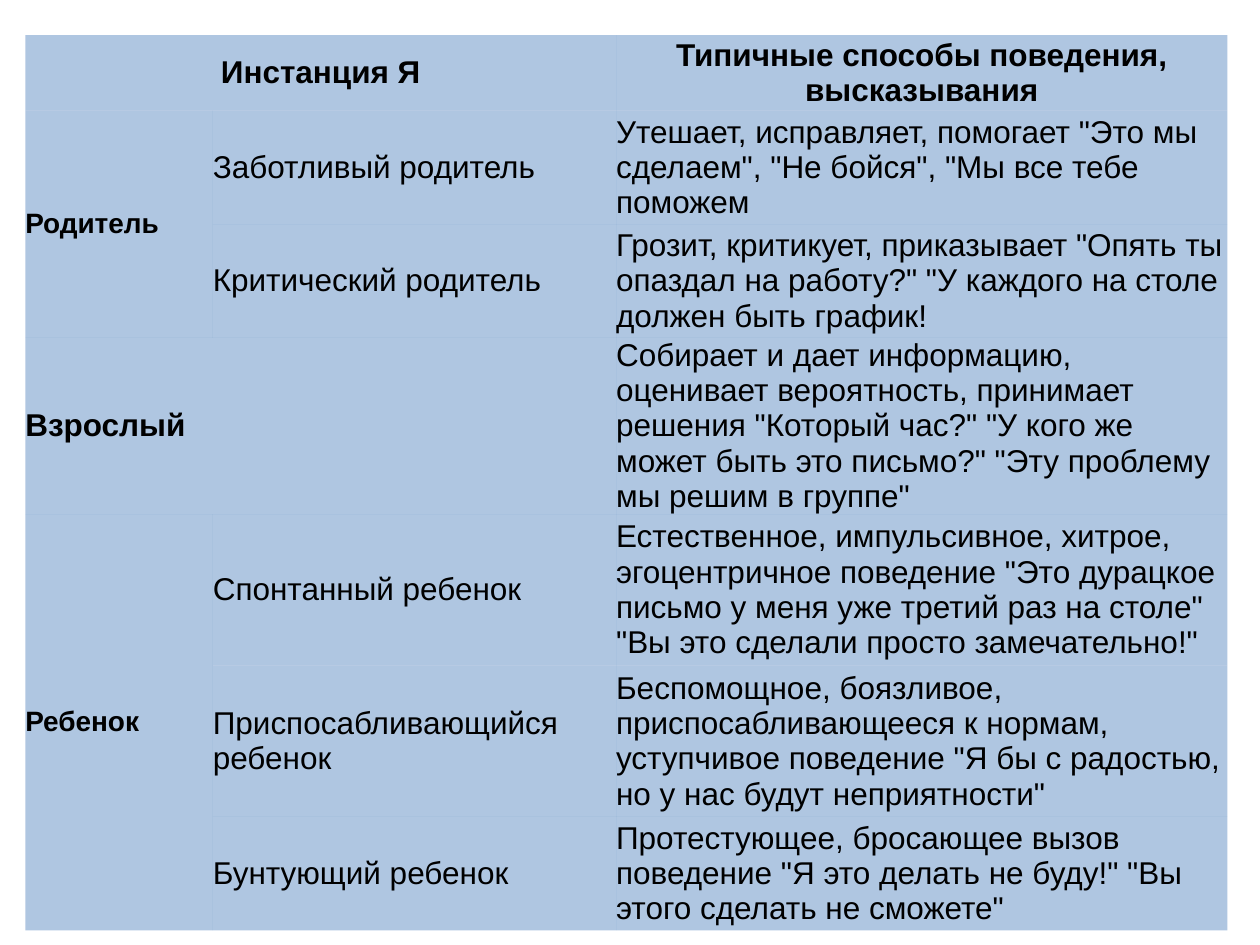
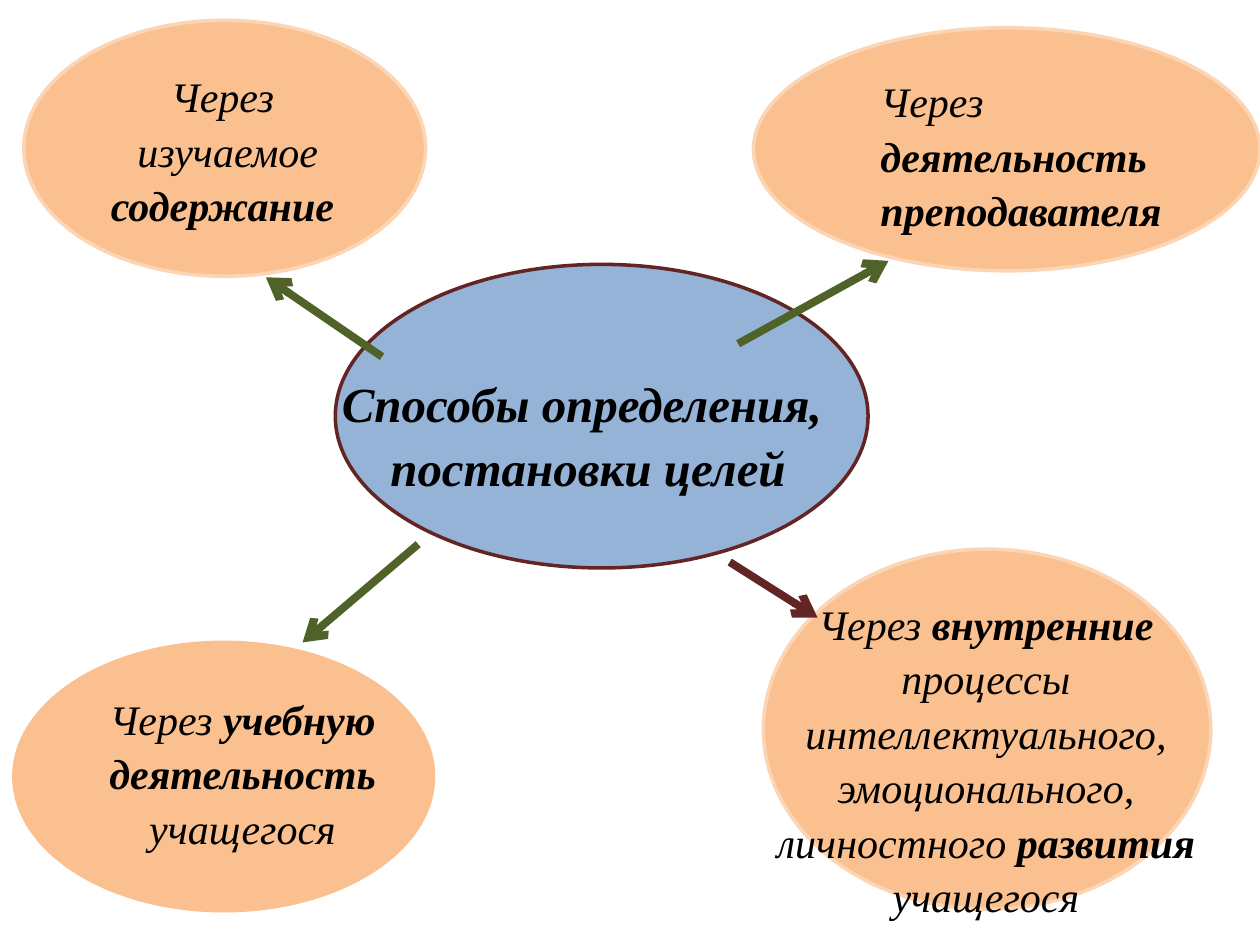
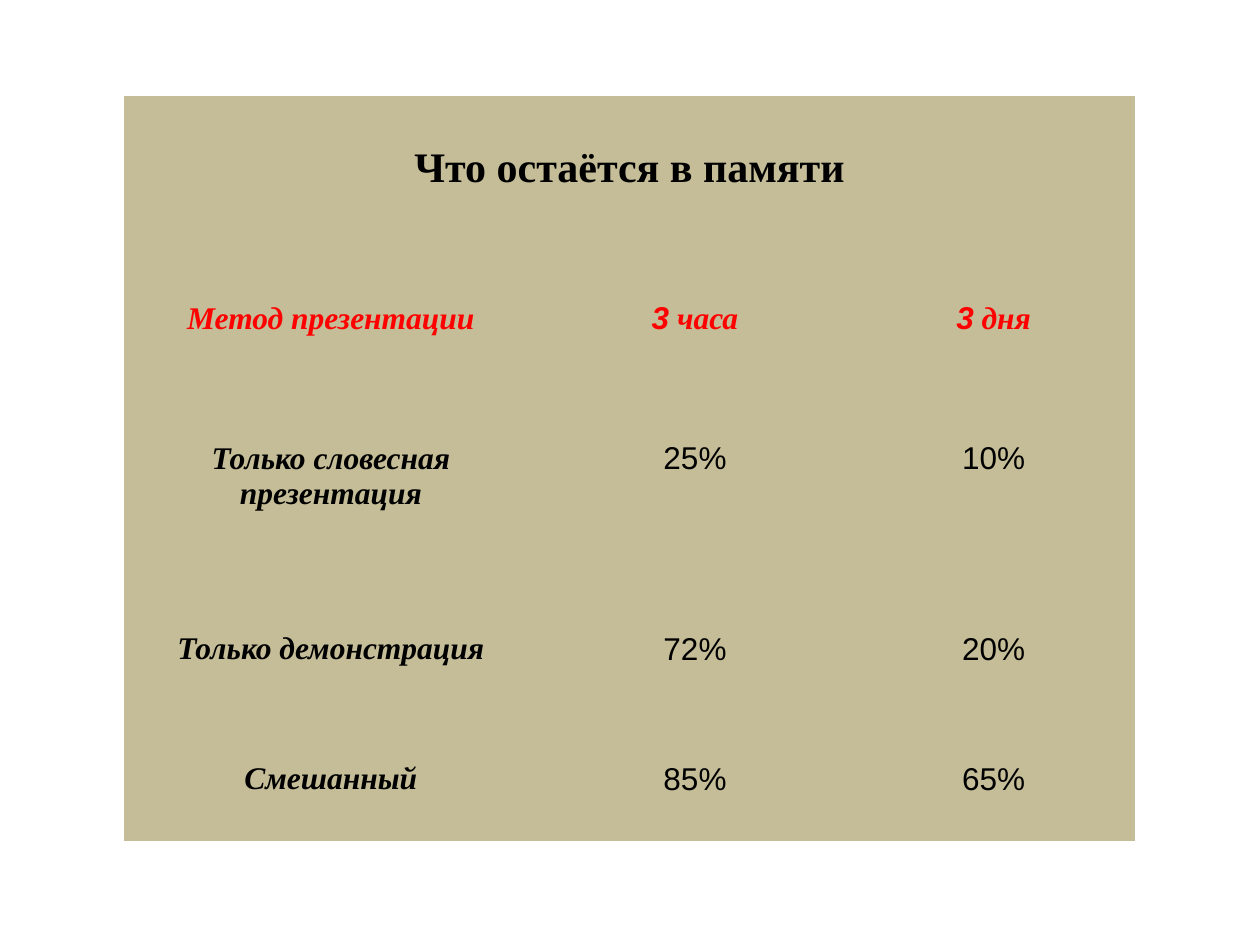
import pptx
import pptx.dml.color
import pptx.enum.shapes
import pptx.enum.text
import pptx.oxml
import pptx.util
from pptx.util import Cm

SANS, SERIF = "Arial", "Times New Roman"
BLACK, RED, BLUE, KHAKI = "000000", "FF0000", "4F81BD", "C4BD97"
PEACH, PALE, SKY, MAROON, GREEN = "FAC090", "FCD5B5", "95B3D7", "632523", "4F6228"
NO_GRID = "{2D5ABB26-0587-4C30-8999-92F81FD0307C}"

EGO_STATES = [
    ("Инстанция Я", None, "Типичные способы поведения, высказывания"),
    ("Родитель", "Заботливый родитель",
     'Утешает, исправляет, помогает "Это мы сделаем", "Не бойся", "Мы все тебе поможем'),
    (None, "Критический родитель",
     'Грозит, критикует, приказывает "Опять ты опаздал на работу?" '
     '"У каждого на столе должен быть график!'),
    ("Взрослый", None,
     'Собирает и дает информацию, оценивает вероятность, принимает решения "Который час?" '
     '"У кого же может быть это письмо?" "Эту проблему мы решим в группе"'),
    ("Ребенок", "Спонтанный ребенок",
     'Естественное, импульсивное, хитрое, эгоцентричное поведение "Это дурацкое письмо '
     'у меня уже третий раз на столе" "Вы это сделали просто замечательно!"'),
    (None, "Приспосабливающийся ребенок",
     'Беспомощное, боязливое, приспосабливающееся к нормам, уступчивое поведение '
     '"Я бы с радостью, но у нас будут неприятности"'),
    (None, "Бунтующий ребенок",
     'Протестующее, бросающее вызов поведение "Я это делать не буду!" '
     '"Вы этого сделать не сможете"'),
]
EGO_COLS = (3.78, 8.13, 12.32)
EGO_ROWS = (1.52, 2.29, 2.29, 3.05, 3.05, 3.05, 2.29)
EGO_MERGES = [(0, 0, 0, 1), (1, 0, 2, 0), (3, 0, 3, 1), (4, 0, 6, 0)]

MEMORY = [
    ("Что остаётся в памяти", None, None),
    ("Метод презентации", "3 часа", "3 дня"),
    ("Только словесная презентация", "25%", "10%"),
    ("Только демонстрация", "72%", "20%"),
    ("Смешанный", "85%", "65%"),
]
MEMORY_COLS = (8.36, 6.32, 5.72)
MEMORY_ROWS = (4.09, 2.82, 3.84, 2.62, 1.65)

ELLIPSES = [
    ((0.28, 12.95, 8.46, 5.41), PEACH, PEACH),
    ((0.48, 0.41, 8.1, 5.16), PEACH, PALE),
    ((15.39, 11.07, 9.02, 7.26), PEACH, PALE),
    ((15.19, 0.56, 10.21, 4.9), PEACH, PALE),
    ((6.76, 5.33, 10.74, 6.12), SKY, MAROON),
]
# Each label: box, size, centred, paragraphs of (text, bold) runs
LABELS = [
    ((1.04, 13.77, 7.7, 3.33), 24, True,
     [[("Через ", False), ("учебную деятельность", True), (" учащегося", False)]]),
    ((5.89, 7.32, 11.68, 2.64), 28, True,
     [[("Способы определения,", True)], [(" постановки целей", True)]]),
    ((0.99, 1.22, 6.99, 3.33), 24, True,
     [[("Через", False)], [(" изучаемое ", False), ("содержание", True)]]),
    ((17.5, 1.32, 6.22, 3.33), 24, False,
     [[("Через", False)], [("деятельность", True)], [("преподавателя", True)]]),
    ((14.91, 11.86, 9.93, 7.19), 24, True,
     [[("Через ", False), ("внутренние ", True),
       ("процессы интеллектуального, эмоционального, личностного ", False),
       ("развития ", True), ("учащегося", False)]]),
]
ARROWS = [
    ((14.88, 6.93, 17.91, 5.26), GREEN),
    ((14.71, 11.33, 16.48, 12.45), MAROON),
    ((8.43, 10.97, 6.1, 12.95), GREEN),
    ((7.7, 7.19, 5.36, 5.59), GREEN),
]


def rgb(value):
    """Turn a hex string into a colour."""
    return pptx.dml.color.RGBColor.from_string(value)


def cms(values):
    """Convert centimetre numbers to lengths."""
    return [Cm(v) for v in values]


def xml(tag, attrs="", inner=""):
    """Build one DrawingML element."""
    ns = "http://schemas.openxmlformats.org/drawingml/2006/main"
    return pptx.oxml.parse_xml(f'<a:{tag} xmlns:a="{ns}" {attrs}>{inner}</a:{tag}>')


def add_run(p, text, size, font, color=BLACK, bold=False, italic=False):
    """Append a formatted run."""
    r = p.add_run()
    r.text = text
    r.font.size = pptx.util.Pt(size)
    r.font.name = font
    r.font.bold = bold
    r.font.italic = italic
    r.font.color.rgb = rgb(color)


def centre(p):
    """Centre a paragraph."""
    p.alignment = pptx.enum.text.PP_ALIGN.CENTER


def add_grid(s, left, top, cols, rows, merges, fill, margin, alpha=None):
    """Add an unstyled table with one fill for all its cells."""
    frame = s.shapes.add_table(len(rows), len(cols), *cms((left, top, sum(cols), sum(rows))))
    table = frame.table
    table.first_row = table.horz_banding = False
    table._tbl.tblPr.find("{*}tableStyleId").text = NO_GRID
    for col, width in zip(table.columns, cols):
        col.width = Cm(width)
    for row, height in zip(table.rows, rows):
        row.height = Cm(height)
    for cell in table.iter_cells():
        cell.fill.solid()
        cell.fill.fore_color.rgb = rgb(fill)
        if alpha:
            cell._tc.tcPr.find(".//{*}srgbClr").append(xml("alpha", f'val="{alpha * 1000}"'))
        cell.margin_left = cell.margin_right = Cm(margin)
        cell.margin_top = cell.margin_bottom = Cm(margin)
    for r1, c1, r2, c2 in merges:
        table.cell(r1, c1).merge(table.cell(r2, c2))
    return table


def ego_slide(s):
    """Table of ego states and their typical behaviour."""
    table = add_grid(s, 0.51, 0.71, EGO_COLS, EGO_ROWS, EGO_MERGES, BLUE, 0, alpha=45)
    for i, row in enumerate(EGO_STATES):
        for j, text in enumerate(row):
            if text is None:
                continue
            cell = table.cell(i, j)
            cell.vertical_anchor = pptx.enum.text.MSO_ANCHOR.MIDDLE
            p = cell.text_frame.paragraphs[0]
            size = 16 if cell.is_merge_origin and cell.span_height > 1 else 18
            add_run(p, text, size, SANS, bold=i == 0 or j == 0)
            if i == 0:
                centre(p)


def goals_slide(s):
    """Central idea with four ways of setting goals around it."""
    for box, fill, line in ELLIPSES:
        sp = s.shapes.add_shape(pptx.enum.shapes.MSO_SHAPE.OVAL, *cms(box))
        sp.shadow.inherit = False
        sp.fill.solid()
        sp.fill.fore_color.rgb = rgb(fill)
        sp.line.color.rgb = rgb(line)
        sp.line.width = pptx.util.Pt(2)
    for box, size, centred, paragraphs in LABELS:
        tf = s.shapes.add_textbox(*cms(box)).text_frame
        tf.word_wrap = centred
        tf.auto_size = pptx.enum.text.MSO_AUTO_SIZE.SHAPE_TO_FIT_TEXT
        for i, runs in enumerate(paragraphs):
            p = tf.add_paragraph() if i else tf.paragraphs[0]
            p.line_spacing = 1.08
            if centred:
                centre(p)
            for text, bold in runs:
                add_run(p, text, size, SERIF, bold=bold, italic=True)
    for ends, color in ARROWS:
        line = s.shapes.add_connector(pptx.enum.shapes.MSO_CONNECTOR.STRAIGHT, *cms(ends))
        line.line.color.rgb = rgb(color)
        line.line.width = pptx.util.Pt(4.5)
        line.line._get_or_add_ln().append(xml("tailEnd", 'type="arrow"'))
        line._element.spPr.append(xml("effectLst"))


def memory_slide(s):
    """Table of what is remembered after each kind of presentation."""
    table = add_grid(s, 2.49, 1.93, MEMORY_COLS, MEMORY_ROWS, [(0, 0, 0, 2)], KHAKI, 0.05)
    table.cell(0, 0).margin_top = Cm(0.99)
    for i, row in enumerate(MEMORY):
        for j, text in enumerate(row):
            if text is None:
                continue
            p = table.cell(i, j).text_frame.paragraphs[0]
            centre(p)
            if i == 0:
                add_run(p, text, 24, SERIF, bold=True)
            elif j == 0:
                add_run(p, text, 18, SERIF, RED if i == 1 else BLACK, True, True)
            elif i == 1:
                add_run(p, text[0], 18, SANS, RED, True, True)
                add_run(p, text[1:], 18, SERIF, RED, True, True)
            else:
                add_run(p, text, 18, SANS)


def main():
    """Build the three slides."""
    prs = pptx.Presentation()
    prs.slide_width, prs.slide_height = Cm(25.4), Cm(19.05)
    for build in (ego_slide, goals_slide, memory_slide):
        build(prs.slides.add_slide(prs.slide_layouts[6]))
    prs.save("out.pptx")


if __name__ == "__main__":
    main()
